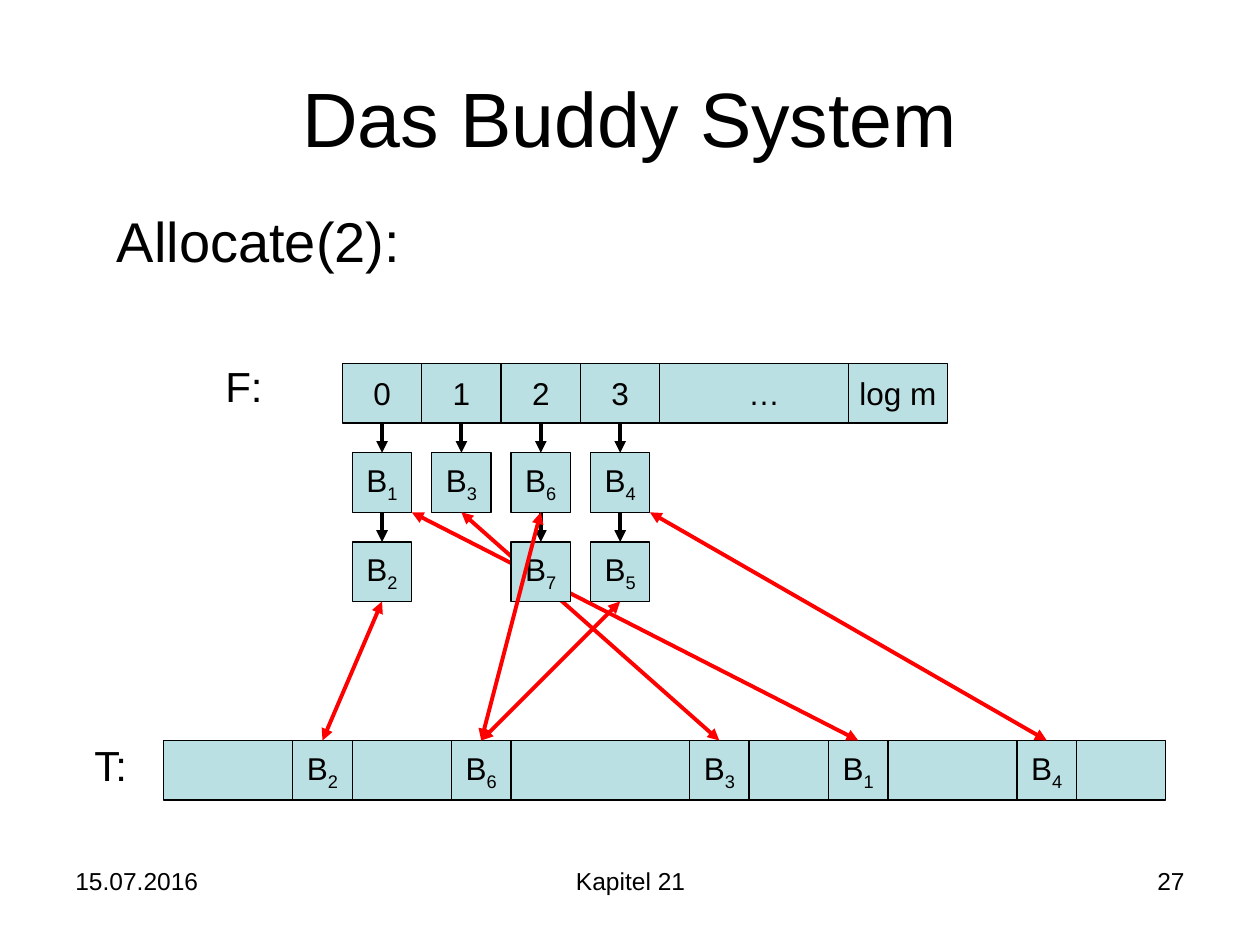
"""Builds the slide on allocating a block in the buddy system."""
from dataclasses import dataclass
from typing import Optional

from lxml.etree import SubElement
from pptx import Presentation
from pptx.dml.color import RGBColor
from pptx.enum.shapes import MSO_CONNECTOR, MSO_SHAPE
from pptx.enum.text import MSO_ANCHOR, PP_ALIGN
from pptx.oxml.ns import qn
from pptx.shapes.autoshape import Shape
from pptx.util import Inches, Pt

WIDE, HIGH = 10, 7.5
UNIT = WIDE / 127
LEFT, TOP = 0.04, 0.05
NODE = 6
F_COL, F_ROW, T_COL, T_ROW = 34, 36, 16, 74
LIST_ROW, STEP, PITCH = 45, 9, 8
BLACK, RED, TEAL = "000000", "FF0000", "BBE0E3"
UP, DOWN = 0, 2


@dataclass
class Cell:
    col: float
    row: float
    wide: float = NODE
    text: str = ""
    sub: str = ""


@dataclass
class Label:
    text: str
    left: float
    top: float
    wide: float
    high: float
    size: int
    align: PP_ALIGN = PP_ALIGN.LEFT
    wrap: bool = False


@dataclass
class Link:
    start: str
    end: str
    corner: bool = False


def ink(code: str) -> RGBColor:
    return RGBColor.from_string(code)


def write(shape: Shape, text: str, size: int, align: PP_ALIGN, sub: str = "") -> None:
    para = shape.text_frame.paragraphs[0]
    para.alignment = align
    for part, base in ((text, None), (sub, "-25000")):
        if part:
            run = para.add_run()
            run.text = part
            for name, value in {"name": "Arial", "size": Pt(size)}.items():
                setattr(run.font, name, value)
            run.font.color.rgb = ink(BLACK)
            if base:
                run.font._element.set("baseline", base)


def draw_cell(shapes, cell: Cell) -> Shape:
    box = shapes.add_shape(
        MSO_SHAPE.RECTANGLE,
        Inches(LEFT + cell.col * UNIT), Inches(TOP + cell.row * UNIT),
        Inches(cell.wide * UNIT), Inches(NODE * UNIT))
    box.shadow.inherit = False
    box.fill.solid()
    box.fill.fore_color.rgb = ink(TEAL)
    box.line.color.rgb = ink(BLACK)
    box.line.width = Pt(0.75)
    frame = {"word_wrap": False, "vertical_anchor": MSO_ANCHOR.MIDDLE}
    for name, value in frame.items():
        setattr(box.text_frame, name, value)
    write(box, cell.text, 18, PP_ALIGN.CENTER, cell.sub)
    return box


def draw_label(shapes, label: Label) -> None:
    box = shapes.add_textbox(
        Inches(label.left * WIDE), Inches(label.top * HIGH),
        Inches(label.wide * WIDE), Inches(label.high * HIGH))
    box.text_frame.word_wrap = label.wrap
    write(box, label.text, label.size, label.align)


def draw_arrow(shapes, start: Shape, end: Shape, color: str,
               ends: tuple, site: Optional[int] = DOWN) -> None:
    line = shapes.add_connector(
        MSO_CONNECTOR.STRAIGHT, start.left + start.width,
        start.top + start.height, end.left, end.top)
    if site is not None:
        line.begin_connect(start, site)
    line.end_connect(end, UP)
    line.line.color.rgb = ink(color)
    line.line.width = Pt(2.25)
    props = line._element.spPr
    for tag in ends:
        SubElement(props.find(qn("a:ln")), qn(tag), type="triangle")
    SubElement(props, qn("a:effectLst"))


def draw_list(shapes, index: int, subs: str, head: Shape) -> dict:
    nodes, last = {}, head
    for depth, sub in enumerate(subs):
        node = draw_cell(shapes, Cell(
            F_COL + 1 + index * PITCH, LIST_ROW + depth * STEP, NODE, "B", sub))
        draw_arrow(shapes, last, node, BLACK, ("a:tailEnd",))
        nodes[sub] = last = node
    return nodes


def draw_links(shapes, links: list, nodes: dict, blocks: dict) -> None:
    for link in links:
        draw_arrow(shapes, nodes[link.start], blocks[link.end], RED,
                   ("a:headEnd", "a:tailEnd"), None if link.corner else DOWN)


LABELS = [
    Label("15.07.2016", 0.05, 0.91, 0.23, 0.07, 14, wrap=True),
    Label("Kapitel 21", 0.342, 0.91, 0.317, 0.07, 14, PP_ALIGN.CENTER, True),
    Label("27", 0.717, 0.91, 0.233, 0.07, 14, PP_ALIGN.RIGHT, True),
    Label("T:", 0.065, 0.776, 0.05, 0.067, 24),
    Label("F:", 0.169, 0.375, 0.05, 0.067, 24),
    Label("Allocate(2):", 0.083, 0.212, 0.257, 0.084, 32),
]
LISTS = {0: "12", 1: "3", 3: "45"}
BLOCKS = {"1": 83, "2": 29, "3": 69, "4": 102, "6": 45}
LINKS = [Link("1", "1", True), Link("2", "2"), Link("3", "3"),
         Link("4", "4", True), Link("5", "6")]


def main() -> None:
    deck = Presentation()
    deck.slide_width, deck.slide_height = Inches(WIDE), Inches(HIGH)
    slide = deck.slides.add_slide(deck.slide_layouts[5])
    shapes = slide.shapes
    title = shapes.title
    place = {"left": 0.5, "top": 0.3, "width": 9, "height": 1.25}
    for name, value in place.items():
        setattr(title, name, Inches(value))
    title.text_frame.vertical_anchor = MSO_ANCHOR.MIDDLE
    write(title, "Das Buddy System", 44, PP_ALIGN.CENTER)
    for label in LABELS:
        draw_label(shapes, label)

    heads = [draw_cell(shapes, Cell(F_COL + i * PITCH, F_ROW, PITCH, str(i)))
             for i in range(4)]
    draw_cell(shapes, Cell(F_COL + 4 * PITCH, F_ROW, 21, "…"))
    draw_cell(shapes, Cell(85, F_ROW, 10, "log m"))
    draw_cell(shapes, Cell(T_COL, T_ROW, 101))
    blocks = {sub: draw_cell(shapes, Cell(col, T_ROW, NODE, "B", sub))
              for sub, col in BLOCKS.items()}
    nodes = {}
    for index, subs in LISTS.items():
        nodes.update(draw_list(shapes, index, subs, heads[index]))
    draw_links(shapes, LINKS, nodes, blocks)
    nodes.update(draw_list(shapes, 2, "67", heads[2]))
    draw_links(shapes, [Link("6", "6")], nodes, blocks)
    deck.save("out.pptx")


if __name__ == "__main__":
    main()
